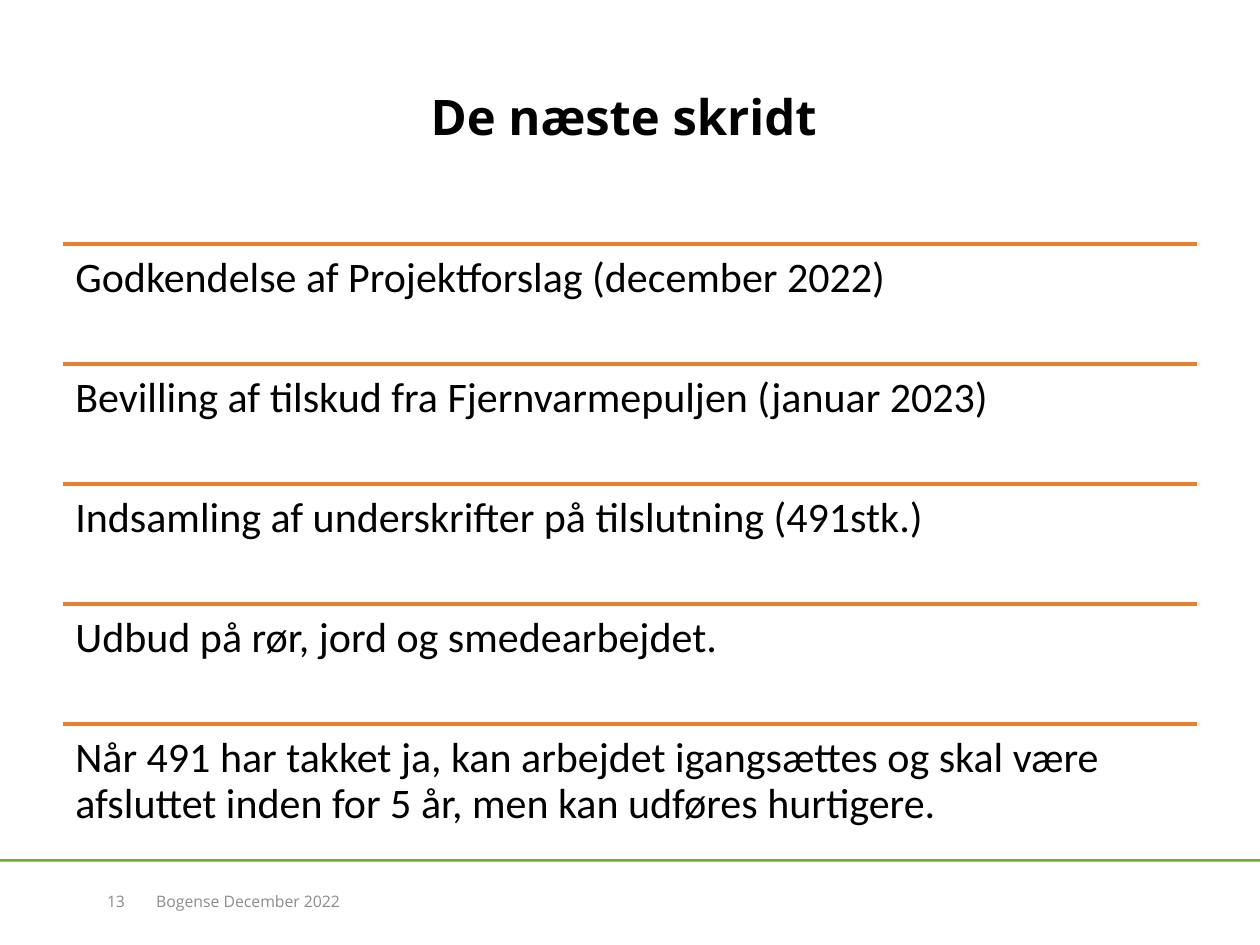
from pptx import Presentation
from pptx.dml.color import RGBColor
from pptx.enum.shapes import MSO_CONNECTOR, MSO_SHAPE
from pptx.enum.text import MSO_ANCHOR, PP_ALIGN
from pptx.oxml.ns import qn
from pptx.util import Cm, Pt
from lxml.etree import SubElement

STEPS = [
    "Godkendelse af Projektforslag (december 2022)",
    "Bevilling af tilskud fra Fjernvarmepuljen (januar 2023)",
    "Indsamling af underskrifter på tilslutning (491stk.)",
    "Udbud på rør, jord og smedearbejdet.",
    "Når 491 har takket ja, kan arbejdet igangsættes og skal være "
    "afsluttet inden for 5 år, men kan udføres hurtigere.",
]
BLACK, GREY, GREEN, ORANGE = "000000", "8C8C8C", "6AB023", "ED7D31"


def color(code):
    return RGBColor.from_string(code)


def add_text(slide, box, text, size, face, code, bold=False,
             align=PP_ALIGN.LEFT, anchor=MSO_ANCHOR.MIDDLE, inset=0.13):
    frame = slide.shapes.add_textbox(*map(Cm, box)).text_frame
    frame.word_wrap = True
    frame.vertical_anchor = anchor
    frame.margin_left = frame.margin_right = Cm(0.25)
    frame.margin_top = frame.margin_bottom = Cm(inset)
    par = frame.paragraphs[0]
    par.alignment = align
    run = par.add_run()
    run.text = text
    run.font.size = Pt(size)
    run.font.name = face
    run.font.bold = bold
    run.font.color.rgb = color(code)
    return par


def add_rule(slide, left, top, width):
    rule = slide.shapes.add_connector(
        MSO_CONNECTOR.STRAIGHT, Cm(left), Cm(top), Cm(left + width), Cm(top))
    rule.line.color.rgb = color(ORANGE)
    rule.line.width = Pt(2)
    SubElement(rule._element.spPr, qn("a:effectLst"))


def add_title(slide, box):
    # The trailing space is part of the centred line
    add_text(slide, box, "De næste skridt ", 28, "Open Sans", BLACK,
             bold=True, align=PP_ALIGN.CENTER)


def add_steps(slide, box):
    left, top, width, height = box
    row = height / len(STEPS)
    for i, step in enumerate(STEPS):
        y = top + i * row
        add_rule(slide, left, y, width)
        par = add_text(slide, (left, y, width, row), step, 24, "Calibri",
                       BLACK, anchor=MSO_ANCHOR.TOP, inset=0.25)
        par.line_spacing = 0.9


def add_footer(slide, box):
    left, top, width, height = box
    # Green band across the slide
    band = slide.shapes.add_shape(
        MSO_SHAPE.RECTANGLE, Cm(left), Cm(top), Cm(width), Cm(0.05))
    band.shadow.inherit = False
    band.fill.solid()
    band.fill.fore_color.rgb = color(GREEN)
    band.line.fill.background()
    # Page number and date
    y, tall = top + 0.33, height - 0.71
    par = add_text(slide, (left + 1.3, y, 1.47, tall), "13", 9, "Open Sans",
                   GREY, align=PP_ALIGN.RIGHT)
    par.space_after = Pt(6)
    add_text(slide, (left + 2.9, y, 17.4, tall), "Bogense December 2022", 9,
             "Open Sans", GREY)


def main():
    deck = Presentation()
    deck.slide_width, deck.slide_height = Cm(25.4), Cm(19.05)
    slide = deck.slides.add_slide(deck.slide_layouts[6])
    add_footer(slide, (0, 17.32, 25.4, 1.73))
    add_title(slide, (1.27, 1.52, 22.86, 1.63))
    add_steps(slide, (1.27, 4.92, 22.86, 12.1))
    deck.save("out.pptx")


if __name__ == "__main__":
    main()
